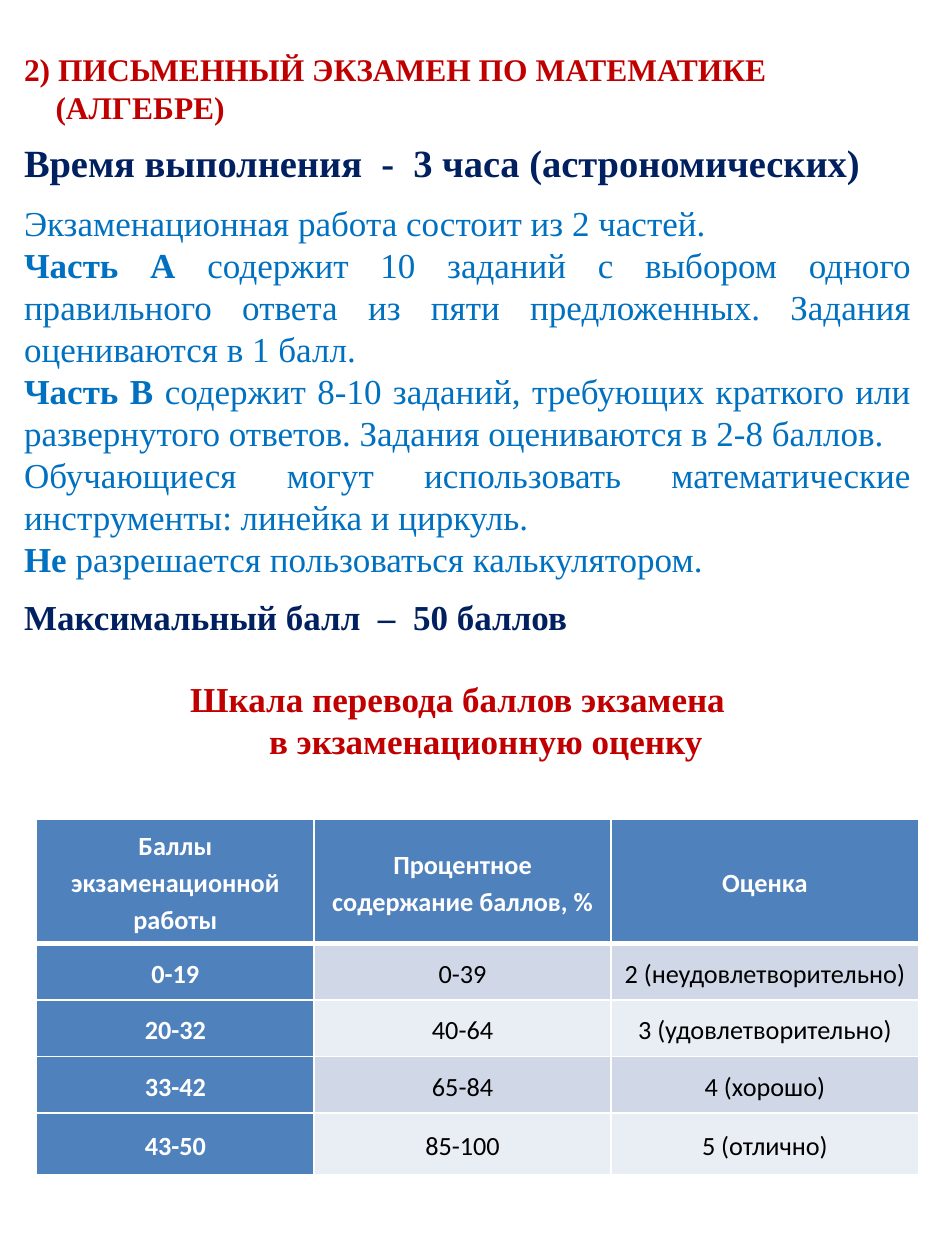
from dataclasses import dataclass

import pptx
import pptx.dml.color
import pptx.enum.text
import pptx.oxml
import pptx.util
from pptx.oxml.ns import nsdecls

Cm, Pt = pptx.util.Cm, pptx.util.Pt
RGBColor = pptx.dml.color.RGBColor
PP_ALIGN = pptx.enum.text.PP_ALIGN
MSO_ANCHOR = pptx.enum.text.MSO_ANCHOR

RED = RGBColor(0xC0, 0x00, 0x00)
NAVY = RGBColor(0x00, 0x20, 0x60)
BLUE = RGBColor(0x00, 0x70, 0xC0)
WHITE = RGBColor(0xFF, 0xFF, 0xFF)
BLACK = RGBColor(0x00, 0x00, 0x00)
HEAD_FILL = RGBColor(0x4F, 0x81, 0xBD)
BAND_FILLS = (RGBColor(0xD0, 0xD8, 0xE8), RGBColor(0xE9, 0xED, 0xF4))


@dataclass
class Para:
    bold: str = ""
    plain: str = ""
    color: RGBColor = BLUE
    size: float = 20
    before: float = 0
    indent: float = 0
    align: PP_ALIGN = PP_ALIGN.JUSTIFY


TITLE = [
    Para("2) ПИСЬМЕННЫЙ ЭКЗАМЕН ПО МАТЕМАТИКЕ", color=RED, size=18),
    Para("(АЛГЕБРЕ)", color=RED, size=18, indent=18),
]
BODY = [
    Para("Время выполнения  -  3 часа (астрономических)", color=NAVY, size=22),
    Para(plain="Экзаменационная работа состоит из 2 частей.", before=9.2),
    Para("Часть А", " содержит 10 заданий с выбором одного правильного ответа "
         "из пяти предложенных. Задания оцениваются в 1 балл."),
    Para("Часть В", " содержит 8-10 заданий, требующих краткого или "
         "развернутого ответов. Задания оцениваются в 2-8 баллов."),
    Para(plain="Обучающиеся могут использовать математические инструменты: "
         "линейка и циркуль."),
    Para("Не", " разрешается пользоваться калькулятором."),
    Para("Максимальный балл  –  50 баллов", color=NAVY, before=9.2),
    Para("Шкала перевода баллов экзамена", color=RED, before=23, indent=95,
         align=PP_ALIGN.LEFT),
    Para("в экзаменационную оценку", color=RED, indent=140, align=PP_ALIGN.LEFT),
]
GRADES = [
    ("Баллы экзаменационной работы", "Процентное содержание баллов, %", "Оценка"),
    ("0-19", "0-39", "2 (неудовлетворительно)"),
    ("20-32", "40-64", "3 (удовлетворительно)"),
    ("33-42", "65-84", "4 (хорошо)"),
    ("43-50", "85-100", "5 (отлично)"),
]
COL_WIDTHS = (5.59, 5.99, 6.2)
ROW_HEIGHTS = (2.51, 1.14, 1.14, 1.14, 1.24)


def style_run(r, font: str, size: float, color: RGBColor, bold: bool) -> None:
    r.font.name = font
    r.font.size = Pt(size)
    r.font.color.rgb = color
    r.font.bold = bold


def fill_placeholder(sp, top: float, height: float, paras: list[Para]) -> None:
    sp.left, sp.top, sp.width, sp.height = Cm(0.23), Cm(top), Cm(18.39), Cm(height)
    tf = sp.text_frame
    tf.word_wrap = True
    tf.auto_size = pptx.enum.text.MSO_AUTO_SIZE.NONE
    tf.vertical_anchor = MSO_ANCHOR.TOP
    tf.text = "\n".join(para.bold for para in paras)
    for p, para in zip(tf.paragraphs, paras):
        if para.plain:
            p.add_run().text = para.plain
        for r in p.runs:
            style_run(r, "Times New Roman", para.size, para.color, r.text == para.bold)
        p.alignment = para.align
        p.space_before = Pt(para.before)
        # Indent without a bullet
        pPr = p._p.get_or_add_pPr()
        pPr.set("marL", str(Pt(para.indent)))
        pPr.set("indent", "0")
        pPr.append(pptx.oxml.parse_xml(f"<a:buNone {nsdecls('a')}/>"))


def style_cell(cell, text: str, row: int, col: int) -> None:
    header = row == 0 or col == 0
    cell.margin_left = cell.margin_right = Cm(0.18)
    cell.margin_top = cell.margin_bottom = 0
    cell.vertical_anchor = MSO_ANCHOR.MIDDLE
    # White borders, thick under the heading row
    tcPr = cell._tc.get_or_add_tcPr()
    for side in "LRTB":
        thick = (row, side) in ((0, "B"), (1, "T"))
        tcPr.append(pptx.oxml.parse_xml(
            f'<a:ln{side} {nsdecls("a")} w="{Pt(3 if thick else 1)}"><a:solidFill>'
            f'<a:srgbClr val="{WHITE}"/></a:solidFill></a:ln{side}>'))
    cell.fill.solid()
    cell.fill.fore_color.rgb = HEAD_FILL if header else BAND_FILLS[(row - 1) % 2]
    cell.text_frame.text = text
    p = cell.text_frame.paragraphs[0]
    p.alignment = PP_ALIGN.CENTER
    p.line_spacing = 1.15
    style_run(p.runs[0], "Calibri", 15, WHITE if header else BLACK, header)


def add_grades(s) -> None:
    table = s.shapes.add_table(len(GRADES), len(COL_WIDTHS), Cm(0.74), Cm(16.51),
                               Cm(sum(COL_WIDTHS)), Cm(sum(ROW_HEIGHTS))).table
    table.first_col = True
    for column, width in zip(table.columns, COL_WIDTHS):
        column.width = Cm(width)
    for i, (height, texts) in enumerate(zip(ROW_HEIGHTS, GRADES)):
        table.rows[i].height = Cm(height)
        for j, text in enumerate(texts):
            style_cell(table.cell(i, j), text, i, j)


def main() -> None:
    prs = pptx.Presentation()
    prs.slide_width, prs.slide_height = Cm(19.05), Cm(25.4)
    s = prs.slides.add_slide(prs.slide_layouts[1])
    # Exam description
    fill_placeholder(s.shapes.title, 0.89, 1.7, TITLE)
    fill_placeholder(s.placeholders[1], 2.67, 13.2, BODY)
    # Grade scale
    add_grades(s)
    prs.save("out.pptx")


if __name__ == "__main__":
    main()
